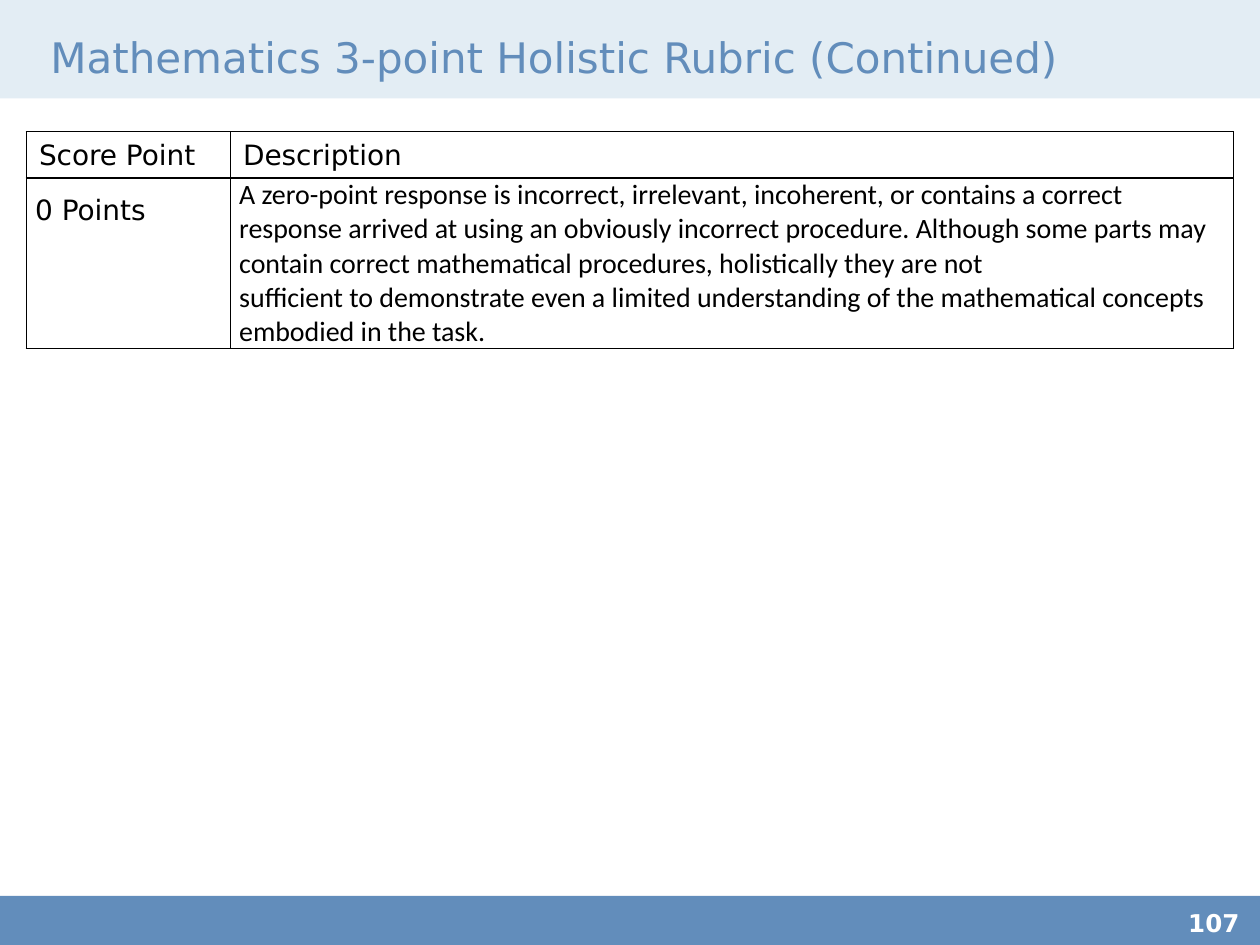
from dataclasses import dataclass

from lxml.etree import SubElement
from pptx import Presentation
from pptx.dml.color import RGBColor as Color
from pptx.enum.shapes import MSO_SHAPE as Shape
from pptx.enum.text import MSO_ANCHOR as Anchor
from pptx.oxml.ns import qn
from pptx.util import Pt


@dataclass(frozen=True)
class Theme:
    blue: str = "628DBB"
    pale: str = "E3EDF4"
    white: str = "FFFFFF"
    black: str = "000000"
    heading_font: str = "DejaVu Sans"
    body_font: str = "Calibri"
    title_size: int = 24
    table_size: int = 16
    number_size: int = 14


THEME = Theme()

HEADINGS = ["Score Point", "Description"]
SCORE = "0 Points"
DESCRIPTION = [
    "A zero-point response is incorrect, irrelevant, incoherent, or contains a correct "
    "response arrived at using an obviously incorrect procedure. Although some parts may "
    "contain correct mathematical procedures, holistically they are not",
    "sufficient to demonstrate even a limited understanding of the mathematical concepts "
    "embodied in the task.",
]


def write_text(frame, *lines, size, color, font=THEME.heading_font, bold=False, spacing=None):
    """Fill a text frame with one paragraph per line."""
    for index, line in enumerate(lines):
        para = frame.paragraphs[0] if index == 0 else frame.add_paragraph()
        if spacing:
            para.line_spacing = spacing
        span = para.add_run()
        span.text = line
        span.font.name = font
        span.font.size = Pt(size)
        span.font.bold = bold
        span.font.color.rgb = Color.from_string(color)


def add_band(page, top, height, color):
    band = page.shapes.add_shape(Shape.RECTANGLE, Pt(0), Pt(top), Pt(720), Pt(height))
    band.shadow.inherit = False
    band.fill.solid()
    band.fill.fore_color.rgb = Color.from_string(color)
    band.line.fill.background()


def add_label(page, text, left, top, width, height, anchor=Anchor.TOP, right=0, bottom=0, **style):
    box = page.shapes.add_textbox(Pt(left), Pt(top), Pt(width), Pt(height))
    frame = box.text_frame
    frame.word_wrap = True
    frame.vertical_anchor = anchor
    frame.margin_left = frame.margin_top = Pt(0)
    frame.margin_right, frame.margin_bottom = Pt(right), Pt(bottom)
    write_text(frame, text, **style)


def add_borders(cell, color):
    properties = cell._tc.get_or_add_tcPr()
    for side in ("a:lnL", "a:lnR", "a:lnT", "a:lnB"):
        line = SubElement(properties, qn(side), w=str(Pt(1)))
        fill = SubElement(line, qn("a:solidFill"))
        SubElement(fill, qn("a:srgbClr"), val=color)


def fill_cell(cell, *lines, side=5, edge=0, anchor=Anchor.TOP, **style):
    cell.margin_left = cell.margin_right = Pt(side)
    cell.margin_top = cell.margin_bottom = Pt(edge)
    cell.vertical_anchor = anchor
    add_borders(cell, THEME.black)
    cell.fill.background()
    write_text(cell.text_frame, *lines, size=THEME.table_size, color=THEME.black, **style)


def add_rubric(page):
    widths, heights = [116.6, 573.1], [26, 97.5]
    table = page.shapes.add_table(
        2, 2, Pt(15.1), Pt(75.3), Pt(sum(widths)), Pt(sum(heights))).table
    table.first_row = table.horz_banding = False
    for column, width in zip(table.columns, widths):
        column.width = Pt(width)
    for row, height in zip(table.rows, heights):
        row.height = Pt(height)

    for column, heading in enumerate(HEADINGS):
        fill_cell(table.cell(0, column), heading, side=7.2, edge=3.6, anchor=Anchor.BOTTOM)
    fill_cell(table.cell(1, 0), SCORE, spacing=1.5)
    fill_cell(table.cell(1, 1), *DESCRIPTION, font=THEME.body_font)


def main():
    deck = Presentation()
    deck.slide_width, deck.slide_height = Pt(720), Pt(540)
    page = deck.slides.add_slide(deck.slide_layouts[6])

    # Background bands: footer, header, and the white strip that trims the header
    add_band(page, 512, 30, THEME.blue)
    add_band(page, 0, 94.3, THEME.pale)
    add_band(page, 56.2, 62, THEME.white)

    # Title
    add_label(page, "Mathematics 3-point Holistic Rubric (Continued)", 28.8, 16.6, 648, 35.3,
              anchor=Anchor.MIDDLE, right=7.2, bottom=3.6,
              size=THEME.title_size, color=THEME.blue)

    # Rubric table
    add_rubric(page)

    # Page number
    add_label(page, "107", 679, 518.6, 41, 21.4,
              size=THEME.number_size, color=THEME.white, bold=True)

    deck.save("out.pptx")


if __name__ == "__main__":
    main()
